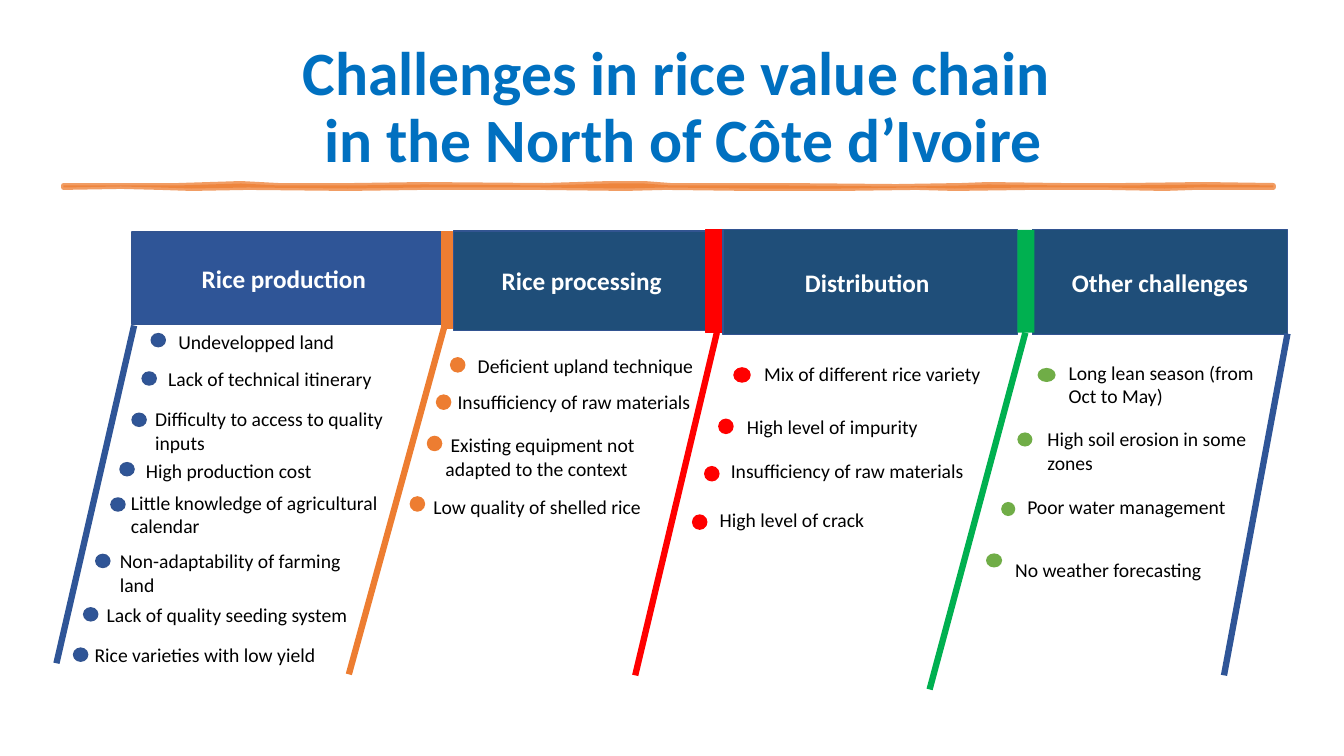
from lxml.etree import SubElement
from pptx import Presentation
from pptx.dml.color import RGBColor
from pptx.enum.shapes import MSO_CONNECTOR as CONN, MSO_SHAPE as SHAPE
from pptx.enum.text import MSO_ANCHOR as ANCHOR, MSO_AUTO_SIZE as AUTO, PP_ALIGN as ALIGN
from pptx.oxml.ns import qn
from pptx.util import Pt

PX = 9144
BLUE, NAVY, EDGE = "2F5597", "1F4E79", "325491"
ORANGE, RED, GREEN, LEAF = "ED7D31", "FF0000", "00B050", "70AD47"

BLOCKS = [
    ("Rice production ", 131, 230, 307, 92, BLUE, EDGE),
    ("Rice processing", 450, 229, 254, 99, NAVY, EDGE),
    ("", 438, 230, 11, 96, ORANGE, ORANGE),
    ("", 700, 228, 21, 102, RED, RED),
    ("Distribution ", 717, 228, 292, 104, NAVY, EDGE),
    ("Other challenges", 1024, 228, 253, 104, NAVY, EDGE),
    ("", 1009, 228, 17, 102, GREEN, None),
]
SLANTS = [
    (133, 323, 56, 658, BLUE),
    (441, 323, 346, 669, ORANGE),
    (711, 330, 630, 670, RED),
    (1017, 330, 922, 684, GREEN),
    (1277, 331, 1214, 670, BLUE),
]
COLUMNS = [
    (BLUE, EDGE, 13, 276, [
        ("Undevelopped land", 150, 331, 14, 167, 322),
        ("Lack of technical itinerary", 141, 369, 14, 157, 359),
        ("Difficulty to access to quality inputs", 131, 410, 14, 144, 399),
        ("High production cost", 119, 459, 14, 135, 450),
        ("Little knowledge of agricultural calendar", 110, 494, 14, 120, 482),
        ("Non-adaptability of farming land", 95, 550, 14, 109, 540),
        ("Lack of quality seeding system", 83, 603, 14, 96, 593),
        ("Rice varieties with low yield", 73, 643, 14, 84, 633),
    ]),
    (ORANGE, ORANGE, 14, 300, [
        ("Deficient upland technique", 447, 355, 14, 464, 346),
        ("Insufficiency of raw materials", 433, 392, 14, 444, 382),
        ("Existing equipment not\nadapted to the context", 424, 433, 14, 432, 425),
        ("Low quality of shelled rice", 407, 493, 14, 420, 486),
    ]),
    (RED, RED, 14, 260, [
        ("Mix of different rice variety", 728, 365, 16, 748, 354),
        ("High level of impurity", 713, 416, 14, 731, 407),
        ("Insufficiency of raw materials", 699, 463, 14, 715, 450),
        ("High level of crack", 687, 511, 14, 704, 499),
    ]),
    (LEAF, None, 14, 232, [
        ("Long lean season (from Oct to May)", 1029, 365, 18, 1050, 353),
        ("High soil erosion in some zones", 1009, 429, 15, 1029, 419),
        ("Poor water management", 993, 498, 14, 1009, 486),
        ("No weather forecasting", 978, 549, 16, 997, 549),
    ]),
]
RULE_TOP = [(63, 184), (177, 184), (239, 182), (276, 184), (351, 184), (420, 183),
            (540, 184), (605, 182), (639, 182), (665, 184), (777, 184), (889, 185),
            (954, 184), (980, 183), (1053, 184), (1116, 184), (1194, 183), (1263, 184)]
RULE_BOTTOM = [(1263, 186), (1185, 186), (1155, 187), (1098, 186), (1023, 186),
               (947, 187), (909, 186), (834, 187), (744, 187), (660, 186), (620, 187),
               (534, 186), (483, 186), (420, 186), (345, 187), (246, 186),
               (190, 187), (159, 186), (120, 185), (63, 186)]


def rgb(color):
    """Turn a hex string into a colour."""
    return RGBColor.from_string(color)


def box(x, y, w, h):
    """Scale a px rectangle to EMU."""
    return x * PX, y * PX, w * PX, h * PX


def paint(sp, fill, line, width=1):
    """Set the fill and outline of a shape, without shadow."""
    sp.shadow.inherit = False
    sp.fill.solid()
    sp.fill.fore_color.rgb = rgb(fill)
    if line:
        sp.line.color.rgb = rgb(line)
        sp.line.width = Pt(width)
    else:
        sp.line.fill.background()


def add_text(p, text, size, color, bold=False):
    """Add one formatted Calibri run to a paragraph."""
    r = p.add_run()
    r.text = text
    r.font.name, r.font.size, r.font.bold = "Calibri", Pt(size), bold
    r.font.color.rgb = rgb(color)


def add_title(s, lines):
    """Fill the title placeholder with centred lines."""
    sp = s.shapes.title
    sp.left, sp.top, sp.width, sp.height = box(74, 39, 1208, 138)
    tf = sp.text_frame
    tf.auto_size, tf.vertical_anchor = AUTO.NONE, ANCHOR.MIDDLE
    p = tf.paragraphs[0]
    p.alignment, p.line_spacing = ALIGN.CENTER, 0.9
    for i, line in enumerate(lines):
        if i:
            p.add_line_break()
        add_text(p, line, 44, "0070C0", True)


def add_brush_rule(s):
    """Draw the translucent uneven rule below the title."""
    fb = s.shapes.build_freeform(*RULE_TOP[0], scale=PX)
    fb.add_line_segments(RULE_TOP[1:] + RULE_BOTTOM, close=True)
    sp = fb.convert_to_shape()
    paint(sp, ORANGE, ORANGE, 3.5)
    for clr in sp._element.spPr.iter(qn("a:srgbClr")):
        SubElement(clr, qn("a:alpha"), val="75000")


def add_block(s, text, x, y, w, h, fill, line):
    """Draw a header block or a narrow divider."""
    sp = s.shapes.add_shape(SHAPE.RECTANGLE, *box(x, y, w, h))
    paint(sp, fill, line)
    if text:
        tf = sp.text_frame
        tf.vertical_anchor = ANCHOR.MIDDLE
        p = tf.paragraphs[0]
        p.alignment = ALIGN.CENTER
        add_text(p, text, 18, "FFFFFF", True)


def add_slant(s, x1, y1, x2, y2, color):
    """Draw a thick leaning line."""
    ln = s.shapes.add_connector(CONN.STRAIGHT, *box(x1, y1, x2, y2))
    ln.line.color.rgb = rgb(color)
    ln.line.width = Pt(4.5)
    SubElement(ln._element.spPr, qn("a:effectLst"))


def add_challenge(s, text, dot_x, dot_y, dot_w, x, y, w, dot_h, fill, line):
    """Add a dot and the challenge it marks."""
    dot = s.shapes.add_shape(SHAPE.OVAL, *box(dot_x, dot_y, dot_w, dot_h))
    paint(dot, fill, line)
    tf = s.shapes.add_textbox(*box(x, y, w, 34)).text_frame
    tf.word_wrap, tf.auto_size = True, AUTO.SHAPE_TO_FIT_TEXT
    lines = text.split("\n")
    for i, part in enumerate(lines):
        p = tf.add_paragraph() if i else tf.paragraphs[0]
        if i < len(lines) - 1:
            p._p.get_or_add_pPr().set("indent", str(5 * PX))
        add_text(p, part, 14, "000000")


def main():
    """Build the slide and save it."""
    prs = Presentation()
    prs.slide_width, prs.slide_height = 1333 * PX, 750 * PX
    s = prs.slides.add_slide(prs.slide_layouts[5])
    add_title(s, ["Challenges in rice value chain ", "in the North of Côte d’Ivoire"])
    add_brush_rule(s)
    for block in BLOCKS:
        add_block(s, *block)
    for slant in SLANTS:
        add_slant(s, *slant)
    for fill, line, dot_h, w, challenges in COLUMNS:
        for challenge in challenges:
            add_challenge(s, *challenge, w, dot_h, fill, line)
    prs.save("out.pptx")


if __name__ == "__main__":
    main()
